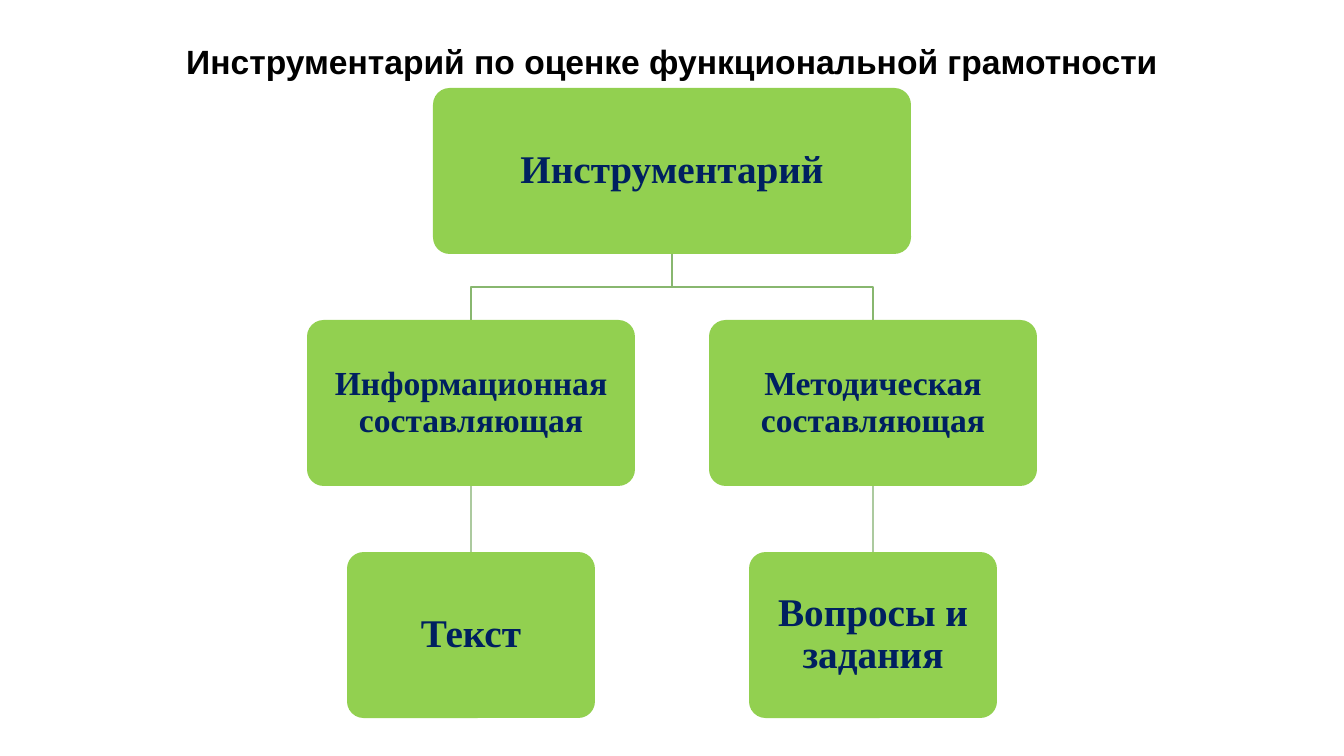
from lxml import etree
from pptx import Presentation
from pptx.dml.color import RGBColor
from pptx.enum.shapes import MSO_CONNECTOR, MSO_SHAPE
from pptx.enum.text import MSO_ANCHOR, PP_ALIGN
from pptx.oxml.ns import qn
from pptx.util import Pt

ROUNDED = MSO_SHAPE.ROUNDED_RECTANGLE
STRAIGHT = MSO_CONNECTOR.STRAIGHT
MIDDLE = MSO_ANCHOR.MIDDLE
CENTER = PP_ALIGN.CENTER

GREEN = RGBColor(0x92, 0xD0, 0x50)
NAVY = RGBColor(0x00, 0x20, 0x60)
BLACK = RGBColor(0x00, 0x00, 0x00)
ELBOW_GREEN = RGBColor(0x88, 0xB7, 0x6F)
STEM_GREEN = RGBColor(0xAC, 0xCA, 0x9F)

EMU_PER_PX = 914400 / 100.8
SLIDE_W, SLIDE_H = 1344, 756
BOX_H, LEVEL_GAP = 166, 66

ROOT = "Инструментарий"
BRANCHES = [
    ("Информационная составляющая", "Текст"),
    ("Методическая составляющая", "Вопросы и задания"),
]


def px(n):
    return round(n * EMU_PER_PX)


def write_text(tf, text, font, size, color, inset):
    tf.word_wrap = True
    tf.vertical_anchor = MIDDLE
    tf.margin_left = tf.margin_right = px(inset)
    tf.margin_top = tf.margin_bottom = px(inset)
    p = tf.paragraphs[0]
    p.text = text
    p.alignment = CENTER
    p.line_spacing = 0.9
    f = p.runs[0].font
    f.name, f.size, f.bold = font, Pt(size), True
    f.color.rgb = color


def add_title(s, x, y, w, h):
    tb = s.shapes.add_textbox(px(x), px(y), px(w), px(h))
    write_text(tb.text_frame, "Инструментарий по оценке функциональной грамотности",
               "Arial", 24, BLACK, 5)


def add_box(s, center, top, w, text, size):
    sp = s.shapes.add_shape(ROUNDED, px(center - w / 2), px(top), px(w), px(BOX_H))
    sp.adjustments[0] = 0.1
    sp.shadow.inherit = False
    sp.fill.solid()
    sp.fill.fore_color.rgb = GREEN
    sp.line.fill.background()
    write_text(sp.text_frame, text, "Times New Roman", size, NAVY, 16)
    return sp


def add_elbow(s, x1, y1, x2, y2):
    """Draw a line down, across and down again between two levels."""
    mid = (y1 + y2) / 2
    fb = s.shapes.build_freeform(px(x1), px(y1))
    fb.add_line_segments([(px(x1), px(mid)), (px(x2), px(mid)), (px(x2), px(y2))],
                         close=False)
    sp = fb.convert_to_shape()
    sp.shadow.inherit = False
    sp.fill.background()
    sp.line.color.rgb = ELBOW_GREEN
    sp.line.width = Pt(1)


def add_stem(s, upper, lower):
    """Join the bottom of one box to the top of the next."""
    cx = s.shapes.add_connector(STRAIGHT, 0, 0, 0, 0)
    cx.begin_connect(upper, 2)
    cx.end_connect(lower, 0)
    cx.line.color.rgb = STEM_GREEN
    cx.line.width = Pt(1)
    etree.SubElement(cx._element.spPr, qn("a:effectLst"))


def add_tree(s, x, y, w):
    center = x + w / 2
    branch_w, leaf_w, root_w = 328, 248, 478
    tops = [y + level * (BOX_H + LEVEL_GAP) for level in range(3)]
    add_box(s, center, tops[0], root_w, ROOT, 28)
    branch_centers = (x + branch_w / 2, x + w - branch_w / 2)
    for branch_center, (branch, leaf) in zip(branch_centers, BRANCHES):
        add_elbow(s, center, tops[0] + BOX_H, branch_center, tops[1])
        upper = add_box(s, branch_center, tops[1], branch_w, branch, 24)
        lower = add_box(s, branch_center, tops[2], leaf_w, leaf, 28)
        add_stem(s, upper, lower)


def main():
    prs = Presentation()
    prs.slide_width, prs.slide_height = px(SLIDE_W), px(SLIDE_H)
    s = prs.slides.add_slide(prs.slide_layouts[6])
    add_title(s, 92, 40, 1160, 48)
    add_tree(s, 307, 88, 730)
    prs.save("out.pptx")


if __name__ == "__main__":
    main()
